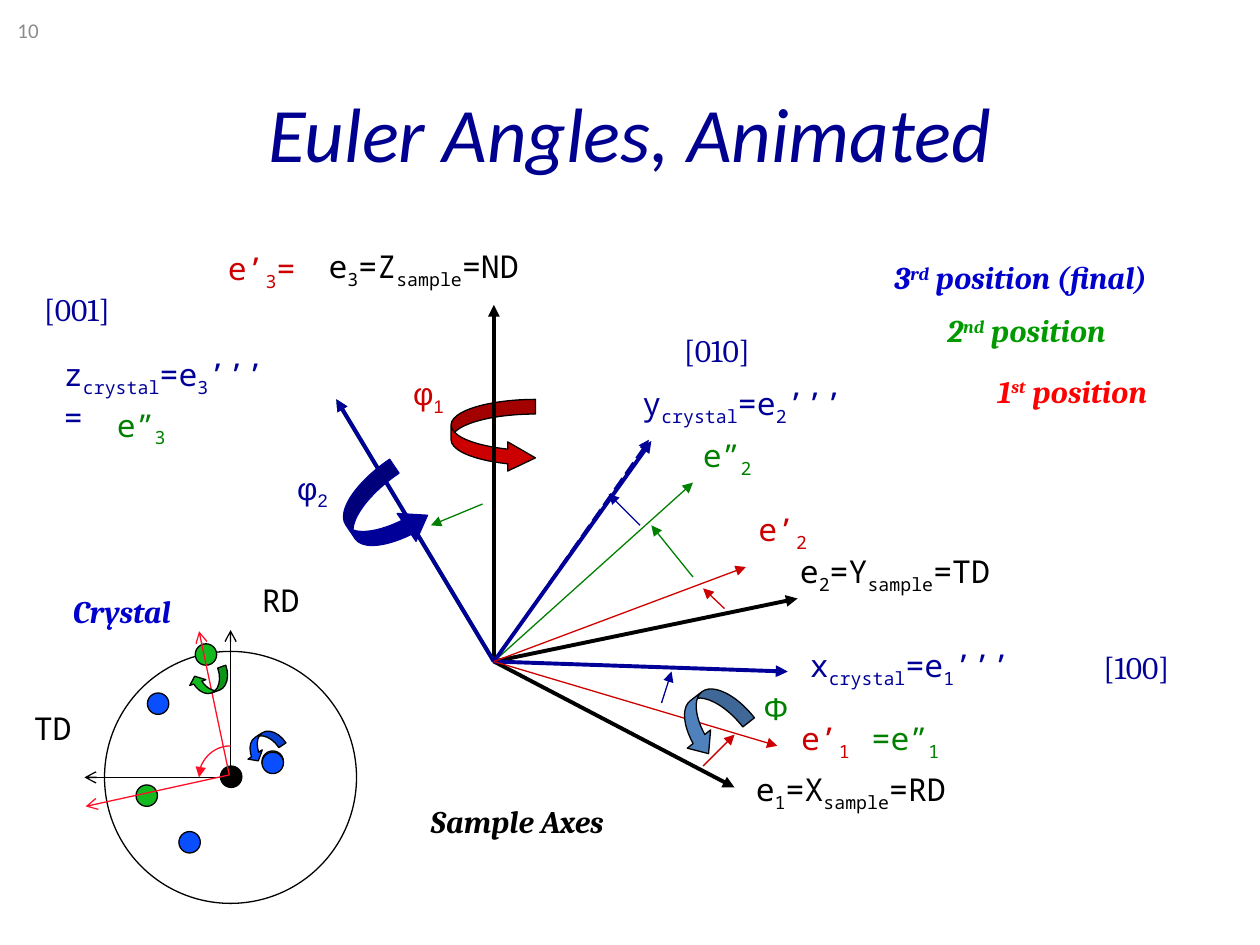
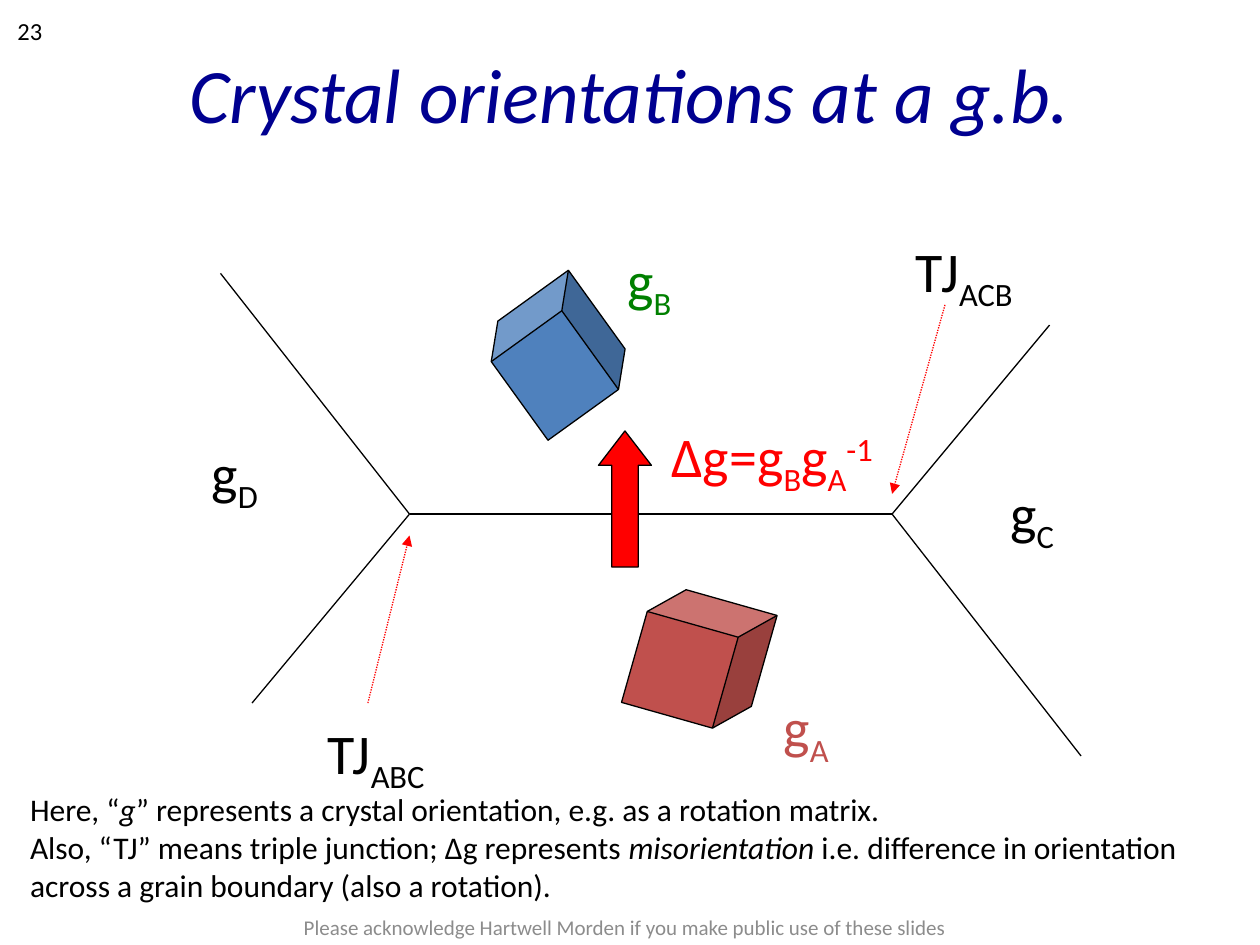
"""Two slides on Euler angles and crystal orientations at a grain boundary."""
from lxml import etree
from pptx import Presentation
from pptx import util as u
from pptx.dml.color import RGBColor
from pptx.enum import dml, shapes, text
from pptx.oxml.ns import qn

PX = 9144

BLACK = RGBColor(0, 0, 0)
GREY = RGBColor(0x8C, 0x8C, 0x8C)
TITLE_BLUE = RGBColor(0, 0, 0x90)
NAVY = RGBColor(0, 0, 0x99)
BLUE = RGBColor(0, 0, 0xCC)
BRIGHT_BLUE = RGBColor(0x0A, 0x4F, 0xFF)
STEEL = RGBColor(0x4F, 0x81, 0xBD)
GREEN = RGBColor(0, 0x80, 0)
LEAF = RGBColor(0, 0x99, 0)
BRIGHT_GREEN = RGBColor(0x12, 0xBA, 0x20)
CRIMSON = RGBColor(0xCC, 0, 0)
RED = RGBColor(0xFF, 0, 0)
POLE_RED = RGBColor(0xFF, 0x0F, 0x27)
BRICK = RGBColor(0xC0, 0x50, 0x4D)

SHAPE = shapes.MSO_SHAPE
LONG_DASH, DOTTED = dml.MSO_LINE.LONG_DASH, dml.MSO_LINE.ROUND_DOT
LEFT, CENTER = text.PP_ALIGN.LEFT, text.PP_ALIGN.CENTER
TOP, MIDDLE = text.MSO_ANCHOR.TOP, text.MSO_ANCHOR.MIDDLE

MONO = dict(font="Noto Sans Mono")
GREEK = dict(font="Arial")
SERIF = dict(font="Cambria")
CAPTION = dict(font="Cambria", bold=True, italic=True)
BASELINES = {"_": -25000, "^": 30000}

ORIGIN = (392, 525)
POLE = (183, 617)
POLE_RADIUS, DOT = 100, 17

AXES = [
    (LONG_DASH, NAVY, 1, [(625, 533), (515, 349), (267, 317)]),
    (None, BLACK, 2.25, [(392, 242), (633, 475), (583, 625)]),
    (None, GREEN, 0.75, [(550, 383)]),
    (None, GREEN, 2.25, [(267, 317)]),
    (None, NAVY, 2.25, [(517, 350), (625, 533), (267, 317)]),
    (None, CRIMSON, 0.75, [(617, 592), (592, 450)]),
]
STEPS = [
    (CRIMSON, (558, 608), (583, 583)),
    (CRIMSON, (575, 483), (558, 467)),
    (GREEN, (550, 458), (517, 417)),
    (GREEN, (383, 400), (342, 417)),
    (NAVY, (508, 417), (483, 392)),
    (NAVY, (525, 558), (533, 533)),
]
POLE_AXES = [
    (BLACK, POLE, [(183, 500), (67, 617)]),
    (POLE_RED, (182, 615), [(158, 501), (68, 640)]),
]
POLE_DOTS = [
    (BLACK, [(175, 608)]),
    (BRIGHT_GREEN, [(208, 596), (108, 623), (155, 511)]),
    (BRIGHT_BLUE, [(117, 550), (142, 660), (208, 597)]),
]
FIRST_TURN = (SHAPE.CURVED_RIGHT_ARROW, (358, 317, 67, 58), 0, (0.2, 0.4, 0.38), CRIMSON, BLACK)
LATER_TURNS = [
    (SHAPE.CURVED_RIGHT_ARROW, (542, 542, 42, 58), 52, (0.28, 0.56, 0.33), STEEL, BLACK),
    (SHAPE.CURVED_LEFT_ARROW, (158, 525, 17, 33), 70.4, (0.4, 0.8, 0.33), BRIGHT_GREEN, BLACK),
    (SHAPE.CURVED_RIGHT_ARROW, (275, 375, 58, 67), 325.9, (0.23, 0.46, 0.33), NAVY, NAVY),
    (SHAPE.CURVED_RIGHT_ARROW, (200, 575, 17, 33), 57, (0.4, 0.8, 0.33), BRIGHT_BLUE, BLACK),
]
EULER_LABELS = [
    (SERIF, NAVY, [
        ("[010]", 533, 258, 100), ("[100]", 866, 509, 100), ("[001]", 25, 225, 100)]),
    (MONO, BLACK, [
        ("e_1_=X_sample_=RD", 590, 606, 234), ("e_2_=Y_sample_=TD", 625, 433, 234),
        ("e_3_=Z_sample_=ND", 251, 191, 234), ("RD", 198, 456, 60), ("TD", 17, 558, 60)]),
    (MONO, GREEN, [
        ("e”_2_", 548, 341, 73), ("e”_3_", 83, 317, 73), ("=e”_1_", 682, 566, 93)]),
    (MONO, NAVY, [
        ("y_crystal_=e_2_’’’", 500, 300, 247), ("x_crystal_=e_1_’’’", 633, 508, 247),
        ("z_crystal_=e_3_’’’\n=", 41, 277, 247)]),
    (MONO, CRIMSON, [
        ("e’_1_", 626, 566, 73), ("e’_2_", 592, 400, 73), ("e’_3_=", 171, 193, 93)]),
    (GREEK, NAVY, [("φ_2_", 226, 367, 49)]),
    (GREEK, CRIMSON, [("φ_1_", 318, 292, 49)]),
    (GREEK, GREEN, [("Φ", 596, 542, 46)]),
    (CAPTION, BLUE, [("Crystal", 48, 465, 130), ("3^rd^ position (final)", 700, 200, 305)]),
    (CAPTION, BLACK, [("Sample Axes", 332, 632, 216)]),
    (CAPTION, LEAF, [("2^nd^ position", 742, 242, 204)]),
    (CAPTION, RED, [("1^st^ position", 782, 290, 196)]),
]

JUNCTION_ABC, JUNCTION_ACB = (325, 408), (708, 408)
BOUNDARIES = [
    (JUNCTION_ABC, JUNCTION_ACB),
    (JUNCTION_ACB, (833, 258)),
    (JUNCTION_ACB, (858, 600)),
    (JUNCTION_ABC, (200, 558)),
    (JUNCTION_ABC, (175, 217)),
]
POINTERS = [((292, 558), (325, 425)), ((750, 242), (708, 392))]
GRAINS = [
    (SHAPE.CUBE, (397, 232, 92, 100), 324.2, (0.25,), STEEL, BLACK),
    (SHAPE.CUBE, (505, 473, 100, 100), 15.8, (0.25,), BRICK, BLACK),
    (SHAPE.UP_ARROW, (475, 342, 42, 108), 0, (0.5, 0.65), RED, BLACK),
]
GRAIN_LABELS = [
    ("g_A_", 612, 545, 59, BRICK),
    ("g_B_", 488, 190, 58, GREEN),
    ("g_C_", 792, 375, 57, BLACK),
    ("g_D_", 158, 343, 60, BLACK),
    ("TJ_ABC_", 250, 565, 106, BLACK),
    ("TJ_ACB_", 717, 183, 106, BLACK),
    ("∆g=g_B_g_A_^-1^", 523, 330, 189, RED),
]
EXPLANATION = (
    "Here, “*g*” represents a crystal orientation, e.g. as a rotation matrix.\n"
    "Also, “TJ” means triple junction; ∆g represents *misorientation* i.e. difference "
    "in orientation across a grain boundary (also a rotation)."
)
CREDIT = "Please acknowledge Hartwell Morden if you make public use of these slides"


def px(*lengths):
    return [round(length * PX) for length in lengths]


def marked_runs(line):
    """Yield (piece, mark) where a pair of _, ^ or * encloses a marked piece."""
    mark, piece = "", ""
    for letter in line:
        if letter in "_^*":
            yield piece, mark
            mark, piece = "" if mark else letter, ""
        else:
            piece += letter
    yield piece, mark


def write(slide, words, box, color, size=18, font="Calibri", bold=False, italic=False,
          align=LEFT, anchor=TOP, wrap=False, grow=True):
    frame = slide.shapes.add_textbox(*px(*box)).text_frame
    frame.word_wrap = wrap
    frame.vertical_anchor = anchor
    frame.auto_size = (text.MSO_AUTO_SIZE.SHAPE_TO_FIT_TEXT if grow
                       else text.MSO_AUTO_SIZE.NONE)
    for number, line in enumerate(words.split("\n")):
        paragraph = frame.add_paragraph() if number else frame.paragraphs[0]
        paragraph.alignment = align
        style = paragraph.font
        style.name, style.size, style.color.rgb = font, u.Pt(size), color
        style.bold, style.italic = bold, italic
        for piece, mark in marked_runs(line):
            if piece:
                run = paragraph.add_run()
                run.text = piece
                if mark == "*":
                    run.font.italic = True
                elif mark:
                    run._r.get_or_add_rPr().set("baseline", str(BASELINES[mark]))


def add_tip(part, end, kind):
    etree.SubElement(part._element.spPr.get_or_add_ln(), qn(f"a:{end}")).set("type", kind)


def draw_line(slide, start, end, color, width=0.75, tip=None, dash=None):
    line = slide.shapes.add_connector(shapes.MSO_CONNECTOR.STRAIGHT, *px(*start, *end))
    line.line.color.rgb, line.line.width = color, u.Pt(width)
    if dash:
        line.line.dash_style = dash
    if tip:
        add_tip(line, "tailEnd", tip)
    etree.SubElement(line._element.spPr, qn("a:effectLst"))


def draw_shape(slide, kind, box, turn=0, bends=(), fill=None, outline=BLACK):
    shape = slide.shapes.add_shape(kind, *px(*box))
    shape.shadow.inherit = False
    shape.rotation = turn
    for number, bend in enumerate(bends):
        shape.adjustments[number] = bend
    if fill is None:
        shape.fill.background()
    else:
        shape.fill.solid()
        shape.fill.fore_color.rgb = fill
    shape.line.color.rgb, shape.line.width = outline, u.Pt(0.75)
    return shape


def start_slide(deck, number, number_size, number_color, title, title_box):
    slide = deck.slides.add_slide(deck.slide_layouts[6])
    write(slide, number, (4, 4, 78, 40), number_color, number_size,
          anchor=MIDDLE, wrap=True, grow=False)
    write(slide, title, title_box, TITLE_BLUE, 44, italic=True,
          align=CENTER, anchor=MIDDLE, wrap=True, grow=False)
    return slide


def draw_pole_figure(slide):
    x, y = POLE
    draw_shape(slide, SHAPE.OVAL,
               (x - POLE_RADIUS, y - POLE_RADIUS, 2 * POLE_RADIUS, 2 * POLE_RADIUS))
    for color, corners in POLE_DOTS:
        for corner in corners:
            draw_shape(slide, SHAPE.OVAL, (*corner, DOT, DOT), fill=color)
    for color, start, ends in POLE_AXES:
        for end in ends:
            draw_line(slide, start, end, color, tip="arrow")
    sweep = draw_shape(slide, SHAPE.ARC, (x - 25, y - 25, 50, 50),
                       bends=(108, 162), outline=POLE_RED)
    add_tip(sweep, "headEnd", "triangle")


def build_euler_angles(deck):
    slide = start_slide(deck, "10", 12, GREY, "Euler Angles, Animated", (75, 42, 850, 125))
    draw_shape(slide, *FIRST_TURN)
    for dash, color, width, ends in AXES:
        for end in ends:
            draw_line(slide, ORIGIN, end, color, width, "triangle", dash)
    for color, start, end in STEPS:
        draw_line(slide, start, end, color, tip="triangle")
    draw_pole_figure(slide)
    for turn in LATER_TURNS:
        draw_shape(slide, *turn)
    for style, color, labels in EULER_LABELS:
        for words, x, y, width in labels:
            height = 50 + 40 * words.count("\n")
            write(slide, words, (x, y, width, height), color, **style)


def build_grain_boundary(deck):
    slide = start_slide(deck, "23", 14, BLACK, "Crystal orientations at a g.b.",
                        (50, 11, 900, 125))
    for start, end in BOUNDARIES:
        draw_line(slide, start, end, BLACK)
    for grain in GRAINS:
        draw_shape(slide, *grain)
    for start, end in POINTERS:
        draw_line(slide, start, end, RED, tip="triangle", dash=DOTTED)
    for words, x, y, width, color in GRAIN_LABELS:
        write(slide, words, (x, y, width, 64), color, 32)
    write(slide, EXPLANATION, (14, 622, 974, 101), BLACK, wrap=True)
    write(slide, CREDIT, (181, 723, 630, 26), GREY, 12,
          align=CENTER, anchor=MIDDLE, wrap=True, grow=False)


def main():
    deck = Presentation()
    deck.slide_width, deck.slide_height = px(1000, 750)
    build_euler_angles(deck)
    build_grain_boundary(deck)
    deck.save("out.pptx")


if __name__ == "__main__":
    main()
